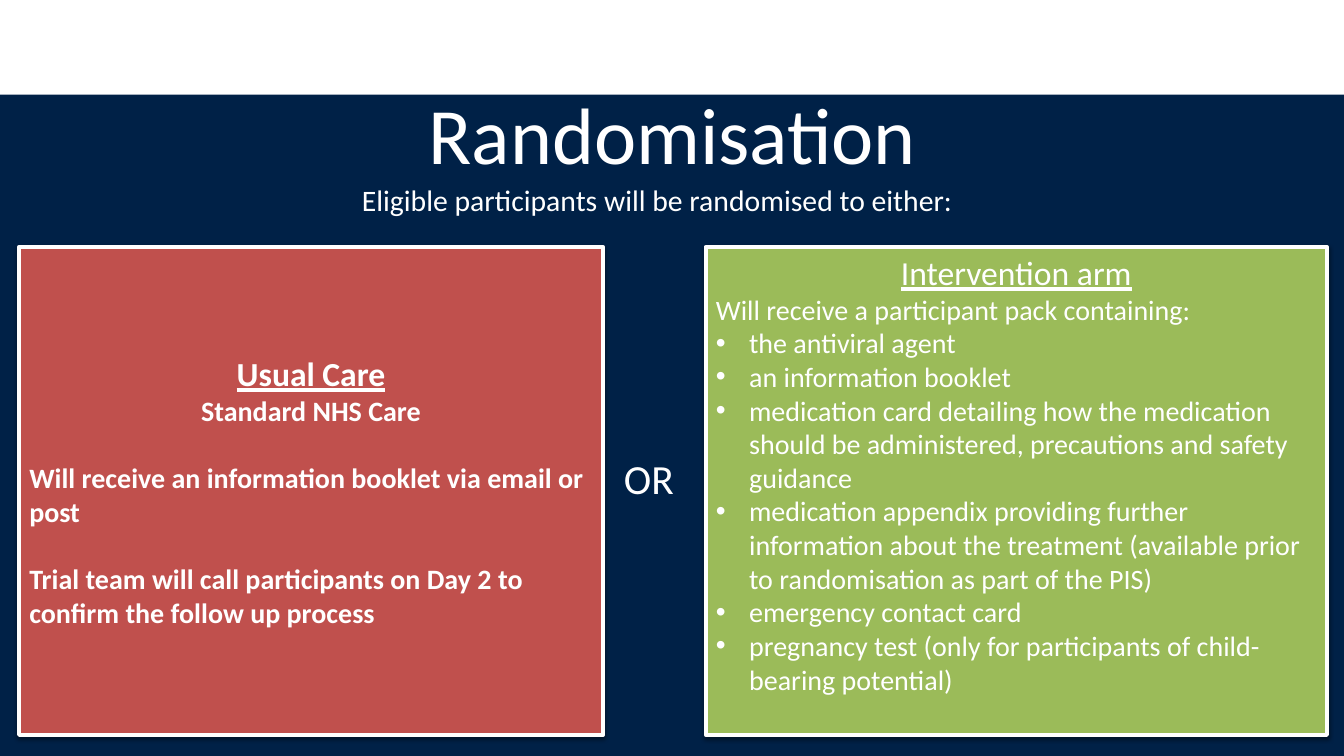
from lxml import etree
from pptx import Presentation
from pptx.dml.color import RGBColor
from pptx.enum.shapes import MSO_SHAPE as SHAPE
from pptx.enum.text import MSO_ANCHOR as ANCHOR, MSO_AUTO_SIZE as AUTO, PP_ALIGN as ALIGN
from pptx.oxml import parse_xml
from pptx.oxml.ns import nsdecls, qn
from pptx.util import Inches, Pt

NAVY, RED, GREEN, WHITE = "002147", "C0504D", "9BBB59", "FFFFFF"
USUAL_CARE = [
    "Will receive an information booklet via email or post",
    "Trial team will call participants on Day 2 to confirm the follow up process",
]
PACK = [
    "the antiviral agent",
    "an information booklet",
    "medication card detailing how the medication should be administered, "
    "precautions and safety guidance",
    "medication appendix providing further information about the treatment "
    "(available prior to randomisation as part of the PIS)",
    "emergency contact card",
    "pregnancy test (only for participants of child-bearing potential)",
]


def color(value):
    """Turn a hex string into a colour."""
    return RGBColor.from_string(value)


def place(sp, box):
    """Move a shape to a box given in inches."""
    sp.left, sp.top, sp.width, sp.height = [Inches(v) for v in box]


def prepare(sp, anchor):
    """Set wrapping and anchoring, and return the text frame."""
    tf = sp.text_frame
    tf.word_wrap = True
    tf.auto_size = AUTO.NONE
    tf.vertical_anchor = anchor
    tf.margin_left = tf.margin_right = Inches(0.1)
    tf.margin_top = tf.margin_bottom = Inches(0.05)
    return tf


def write(p, text, size, align=ALIGN.LEFT, bold=False, underline=False):
    """Add one formatted run to a paragraph."""
    p.alignment = align
    r = p.add_run()
    r.text = text
    r.font.name = "Calibri"
    r.font.size = Pt(size)
    r.font.bold = bold
    r.font.underline = underline
    r.font.color.rgb = color(WHITE)


def set_bullet(p, bulleted):
    """Give a paragraph a hanging bullet or none."""
    pPr = p._p.get_or_add_pPr()
    indent = Inches(0.33) if bulleted else 0
    pPr.set("marL", str(indent))
    pPr.set("indent", str(-indent))
    if bulleted:
        etree.SubElement(pPr, qn("a:buFont")).set("typeface", "Arial")
        etree.SubElement(pPr, qn("a:buChar")).set("char", "•")
    else:
        etree.SubElement(pPr, qn("a:buNone"))


def add_label(s, box, text, size):
    """Add a line of white text."""
    sp = s.shapes.add_textbox(*[Inches(v) for v in box])
    write(prepare(sp, ANCHOR.TOP).paragraphs[0], text, size)


def add_band(s, box):
    """Put the navy band behind everything else."""
    sp = s.shapes.add_shape(SHAPE.RECTANGLE, *[Inches(v) for v in box])
    sp.shadow.inherit = False
    sp.fill.solid()
    sp.fill.fore_color.rgb = color(NAVY)
    sp.line.fill.background()
    sp.element.getparent().insert(2, sp.element)


def add_heading(s, box):
    """Fill the title and the line below it."""
    left, top, width, height = box
    place(s.shapes.title, (left, top, width, 1.07))
    tf = prepare(s.shapes.title, ANCHOR.MIDDLE)
    write(tf.paragraphs[0], "Randomisation", 57.1, ALIGN.CENTER)
    add_label(s, (left + 2.82, top + 0.97, 6.5, height - 0.97), 
              "Eligible participants will be randomised to either:", 21.2)


def add_card(sp, box, fill, heading, lead, items, centered):
    """Turn a body placeholder into the card of one trial arm."""
    place(sp, box)
    sp.fill.solid()
    sp.fill.fore_color.rgb = color(fill)
    sp.line.color.rgb = color(WHITE)
    sp.line.width = Pt(3)
    sp.element.spPr.append(parse_xml(
        f'<a:effectLst {nsdecls("a")}><a:outerShdw blurRad="{Pt(3.1)}" dist="{Pt(1.6)}" '
        'dir="5400000" rotWithShape="0"><a:srgbClr val="000000"><a:alpha val="38000"/>'
        '</a:srgbClr></a:outerShdw></a:effectLst>'))
    tf = prepare(sp, ANCHOR.MIDDLE)
    if not centered:
        tf.margin_bottom = Inches(0.39)
    lead_align = ALIGN.CENTER if centered else ALIGN.LEFT
    rows = [(heading, 24, ALIGN.CENTER), (lead, 20, lead_align)]
    rows += [(item, 20, ALIGN.LEFT) for item in items]
    for i, (text, size, align) in enumerate(rows):
        p = tf.add_paragraph() if i else tf.paragraphs[0]
        set_bullet(p, i > 1 and not centered)
        p.space_before = Pt(24 if i > 1 and centered else 0)
        write(p, text, size, align, bold=centered, underline=i == 0)


def build_randomisation(prs):
    """Build the slide that compares the two trial arms."""
    s = prs.slides.add_slide(prs.slide_layouts[3])
    usual, intervention = list(s.placeholders)[1:3]
    add_band(s, (0, 0.94, 13.33, 6.56))
    add_heading(s, (0.67, 0.78, 12, 1.42))
    add_card(usual, (0.19, 2.45, 5.79, 4.84), RED,
             "Usual Care", "Standard NHS Care", USUAL_CARE, True)
    add_card(intervention, (7, 2.45, 6.16, 4.84), GREEN,
             "Intervention arm", "Will receive a participant pack containing:", PACK, False)
    add_label(s, (6.09, 4.45, 0.79, 0.6), "OR", 29.6)


def main():
    """Create and save the presentation."""
    prs = Presentation()
    prs.slide_width, prs.slide_height = Inches(13.33), Inches(7.5)
    build_randomisation(prs)
    prs.save("out.pptx")


if __name__ == "__main__":
    main()
